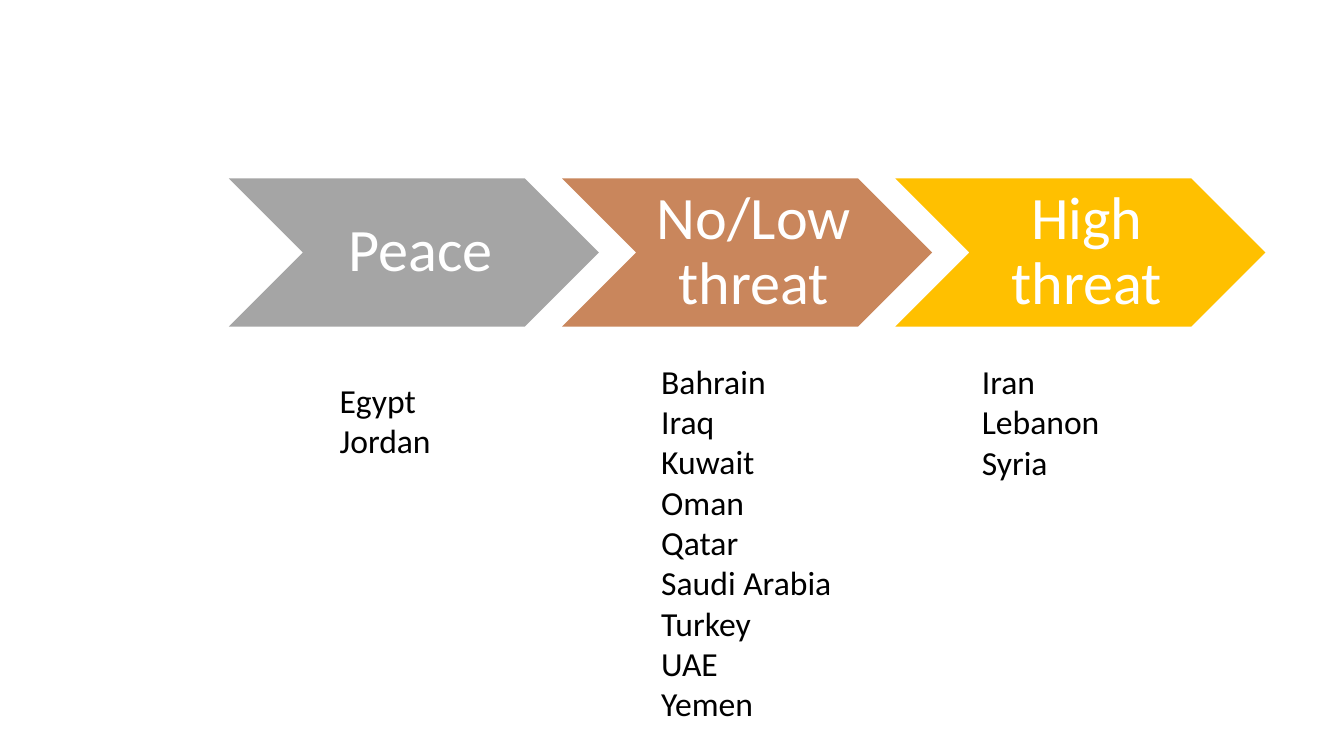
import pptx
import pptx.util
import pptx.dml.color
import pptx.enum.shapes
import pptx.enum.text
from dataclasses import dataclass

Inches = pptx.util.Inches
Pt = pptx.util.Pt
Align = pptx.enum.text.PP_ALIGN
Anchor = pptx.enum.text.MSO_ANCHOR

# Content: stage, fill, countries, list box (left, top, width, height)
STAGES = [
    ("Peace", "A5A5A5", ["Egypt", "Jordan"], (3.27, 3.72, 6.67, 0.91)),
    ("No/Low threat", "C9865C",
     ["Bahrain", "Iraq", "Kuwait", "Oman", "Qatar", "Saudi Arabia",
      "Turkey", "UAE", "Yemen"], (6.46, 3.53, 6.67, 3.74)),
    ("High threat", "FFC000", ["Iran", "Lebanon", "Syria"],
     (9.64, 3.53, 2, 1.32)),
]


@dataclass
class Theme:
    font: str = "Calibri"
    light: str = "FFFFFF"
    dark: str = "000000"
    head: int = 43
    body: int = 24


THEME = Theme()

# Chevron row
LEFT, TOP, WIDTH, HEIGHT = 2.27, 1.77, 3.67, 1.47
STEP = 3.305


def paint(hue):
    return pptx.dml.color.RGBColor.from_string(hue)


def style(para, size, hue, align):
    para.alignment = align
    para.font.name = THEME.font
    para.font.size = Pt(size)
    para.font.color.rgb = paint(hue)


def add_stage(slide, index, label, fill):
    shape = slide.shapes.add_shape(
        pptx.enum.shapes.MSO_SHAPE.CHEVRON, Inches(LEFT + index * STEP),
        Inches(TOP), Inches(WIDTH), Inches(HEIGHT))
    shape.shadow.inherit = False
    shape.fill.solid()
    shape.fill.fore_color.rgb = paint(fill)
    shape.line.fill.background()
    frame = shape.text_frame
    frame.word_wrap = True
    frame.vertical_anchor = Anchor.MIDDLE
    frame.margin_left = Inches(0.19)
    frame.margin_right = frame.margin_top = frame.margin_bottom = Inches(0.06)
    frame.text = label
    para = frame.paragraphs[0]
    para.line_spacing = 0.9
    style(para, THEME.head, THEME.light, Align.CENTER)


def add_list(slide, names, place):
    box = slide.shapes.add_textbox(*map(Inches, place))
    frame = box.text_frame
    frame.word_wrap = True
    frame.auto_size = pptx.enum.text.MSO_AUTO_SIZE.SHAPE_TO_FIT_TEXT
    frame.text = "\n".join(names)
    for para in frame.paragraphs:
        style(para, THEME.body, THEME.dark, Align.LEFT)


def main():
    deck = pptx.Presentation()
    deck.slide_width, deck.slide_height = Inches(13.33), Inches(7.5)
    slide = deck.slides.add_slide(deck.slide_layouts[6])

    # Stages, then the countries below them
    for index, (label, fill, _, _) in enumerate(STAGES):
        add_stage(slide, index, label, fill)
    for _, _, names, place in STAGES:
        add_list(slide, names, place)

    deck.save("out.pptx")


if __name__ == "__main__":
    main()
